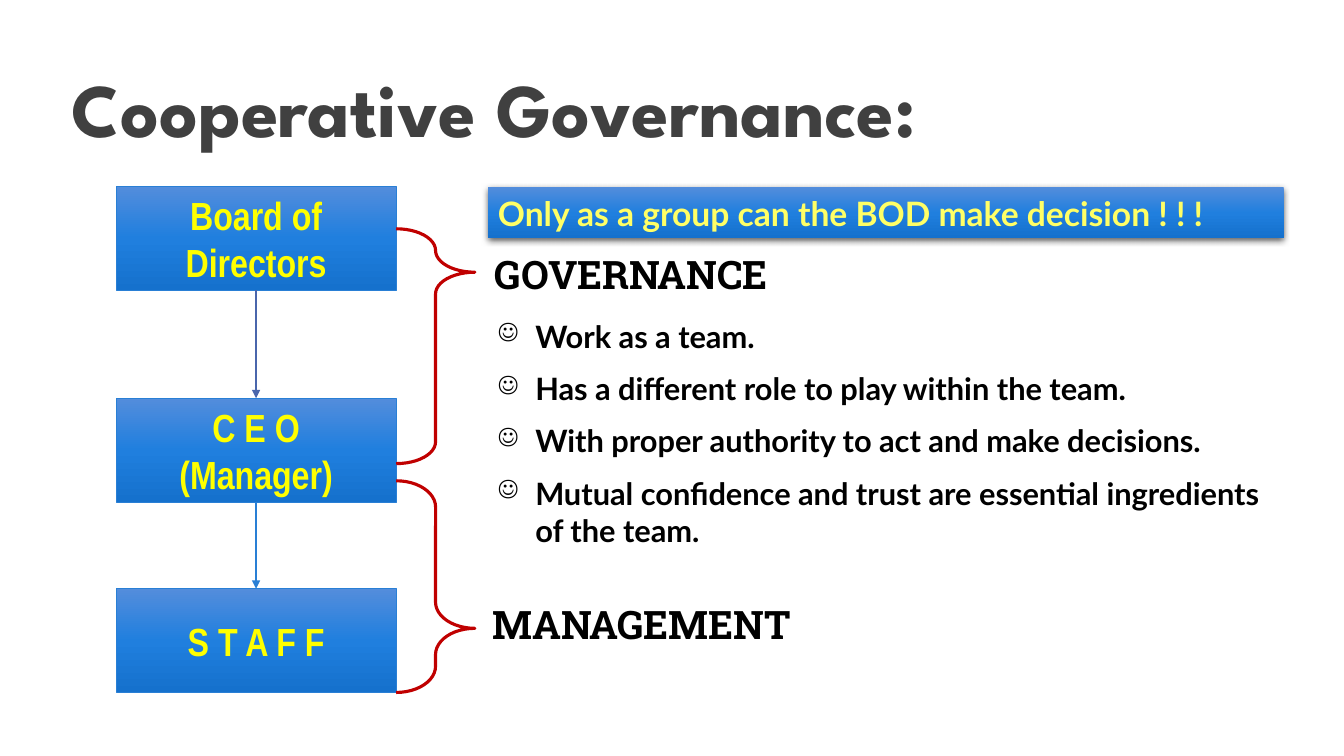
from copy import deepcopy
from dataclasses import dataclass

from lxml import etree
from pptx import Presentation
from pptx.dml.color import RGBColor
from pptx.enum.shapes import MSO_CONNECTOR, MSO_SHAPE
from pptx.enum.text import MSO_ANCHOR, PP_ALIGN
from pptx.oxml.ns import qn
from pptx.util import Emu, Pt

PX = 9144
RECT, BRACE = MSO_SHAPE.RECTANGLE, MSO_SHAPE.RIGHT_BRACE
STRAIGHT = MSO_CONNECTOR.STRAIGHT
TOP, MIDDLE = MSO_ANCHOR.TOP, MSO_ANCHOR.MIDDLE
LEFT, CENTER = PP_ALIGN.LEFT, PP_ALIGN.CENTER
BOTTOM_SITE, TOP_SITE = 2, 0


def text_format(name, size, color):
    return {"name": name, "size": Pt(size), "bold": True, "color": color}


@dataclass(frozen=True)
class Theme:
    gradient = ((0, "538DDC"), (0.5, "207FDE"), (1, "1571CD"))
    box_line = "297FD5"
    arrows = ("4A66AC", "297FD5")
    brace = "C00000"
    title = text_format("League Spartan", 54, "404040")
    box = text_format("Arial Narrow", 28, "FFFF00")
    banner = text_format("Lato", 24, "FFFF66")
    heading = text_format("Roboto Slab", 28, "000000")
    bullet = text_format("Lato", 22, "000000")


THEME = Theme()
BOXES = (
    ("Board of Directors", 185),
    ("C E O\n(Manager)", 395),
    ("S T A F F", 584),
)
HEADINGS = (
    ("GOVERNANCE", (481, 243, 511, 57)),
    ("MANAGEMENT", (479, 591, 533, 57)),
)
BRACES = ((227, 233, 0.185), (477, 210, 0.697))
BULLETS = (
    "Work as a team.",
    "Has a different role to play within the team.",
    "With proper authority to act and make decisions.",
    "Mutual confidence and trust are essential ingredients of the team.",
)


def px(*values):
    return [Emu(v * PX) for v in values]


def add_xml(parent, tag, **attrs):
    return etree.SubElement(parent, qn(tag), attrs)


def write(p, text, fmt, align=LEFT):
    p.text = text
    p.alignment = align
    for r in p.runs:
        for key, value in fmt.items():
            if key == "color":
                r.font.color.rgb = RGBColor.from_string(value)
            else:
                setattr(r.font, key, value)


def set_line(line, color, width):
    line.color.rgb = RGBColor.from_string(color)
    line.width = Pt(width)


def set_gradient(fill, sp):
    fill.gradient()
    fill.gradient_angle = 270
    stops = sp._element.spPr.find(".//" + qn("a:gsLst"))
    stops.append(deepcopy(stops[0]))
    for stop, (position, color) in zip(fill.gradient_stops, THEME.gradient):
        stop.position = position
        stop.color.rgb = RGBColor.from_string(color)


def add_title(s, text):
    sp = s.shapes.title
    sp.left, sp.top, sp.width, sp.height = px(61, 40, 1150, 145)
    tf = sp.text_frame
    tf.word_wrap = True
    tf.vertical_anchor = MIDDLE
    write(tf.paragraphs[0], text, THEME.title)
    tf.paragraphs[0].line_spacing = 0.9


def add_panel(s, bounds, text, fmt, align):
    sp = s.shapes.add_shape(RECT, *px(*bounds))
    sp.shadow.inherit = False
    set_gradient(sp.fill, sp)
    tf = sp.text_frame
    tf.word_wrap = True
    tf.vertical_anchor = MIDDLE
    write(tf.paragraphs[0], text, fmt, align)
    return sp


def add_box(s, text, top):
    sp = add_panel(s, (115, top, 278, 103), text, THEME.box, CENTER)
    set_line(sp.line, THEME.box_line, 0.5)
    return sp


def add_banner(s, text):
    sp = add_panel(s, (484, 186, 789, 50), text, THEME.banner, LEFT)
    sp.line.fill.background()
    effects = sp._element.spPr.find(qn("a:effectLst"))
    shadow = add_xml(effects, "a:outerShdw", blurRad=str(Pt(4.5)), dist=str(Pt(1.5)),
                     dir="5400000", rotWithShape="0")
    add_xml(add_xml(shadow, "a:srgbClr", val="000000"), "a:alpha", val="63000")


def add_text(s, bounds, lines, fmt, bullet=None):
    tf = s.shapes.add_textbox(*px(*bounds)).text_frame
    tf.word_wrap = True
    tf.vertical_anchor = TOP
    for i, line in enumerate(lines):
        p = tf.add_paragraph() if i else tf.paragraphs[0]
        if i:
            p.space_before = Pt(11)
        if bullet:
            pPr = p._p.get_or_add_pPr()
            indent = 37 * PX
            pPr.set("marL", str(indent))
            pPr.set("indent", str(-indent))
            add_xml(pPr, "a:buSzPct", val="80000")
            add_xml(pPr, "a:buChar", char=bullet)
        write(p, line, fmt)


def add_arrow(s, upper, lower, color):
    c = s.shapes.add_connector(STRAIGHT, 0, 0, 0, 0)
    c.begin_connect(upper, BOTTOM_SITE)
    c.end_connect(lower, TOP_SITE)
    set_line(c.line, color, 1.5)
    add_xml(c.line._get_or_add_ln(), "a:tailEnd", type="triangle")
    add_xml(c._element.spPr, "a:effectLst")


def add_brace(s, top, height, tip):
    sp = s.shapes.add_shape(BRACE, *px(393, top, 78, height))
    sp.shadow.inherit = False
    sp.fill.background()
    set_line(sp.line, THEME.brace, 2.25)
    sp.adjustments[0] = 0.333
    sp.adjustments[1] = tip


def main():
    prs = Presentation()
    prs.slide_width, prs.slide_height = px(1333, 750)
    s = prs.slides.add_slide(prs.slide_layouts[5])
    add_title(s, "Cooperative Governance:")
    boxes = [add_box(s, text, top) for text, top in BOXES]
    for upper, lower, color in zip(boxes, boxes[1:], THEME.arrows):
        add_arrow(s, upper, lower, color)
    add_banner(s, "Only as a group can the BOD make decision ! ! !")
    for text, bounds in HEADINGS:
        add_text(s, bounds, [text], THEME.heading)
    add_text(s, (484, 310, 798, 251), BULLETS, THEME.bullet, "☺")
    for top, height, tip in BRACES:
        add_brace(s, top, height, tip)
    prs.save("out.pptx")


if __name__ == "__main__":
    main()
